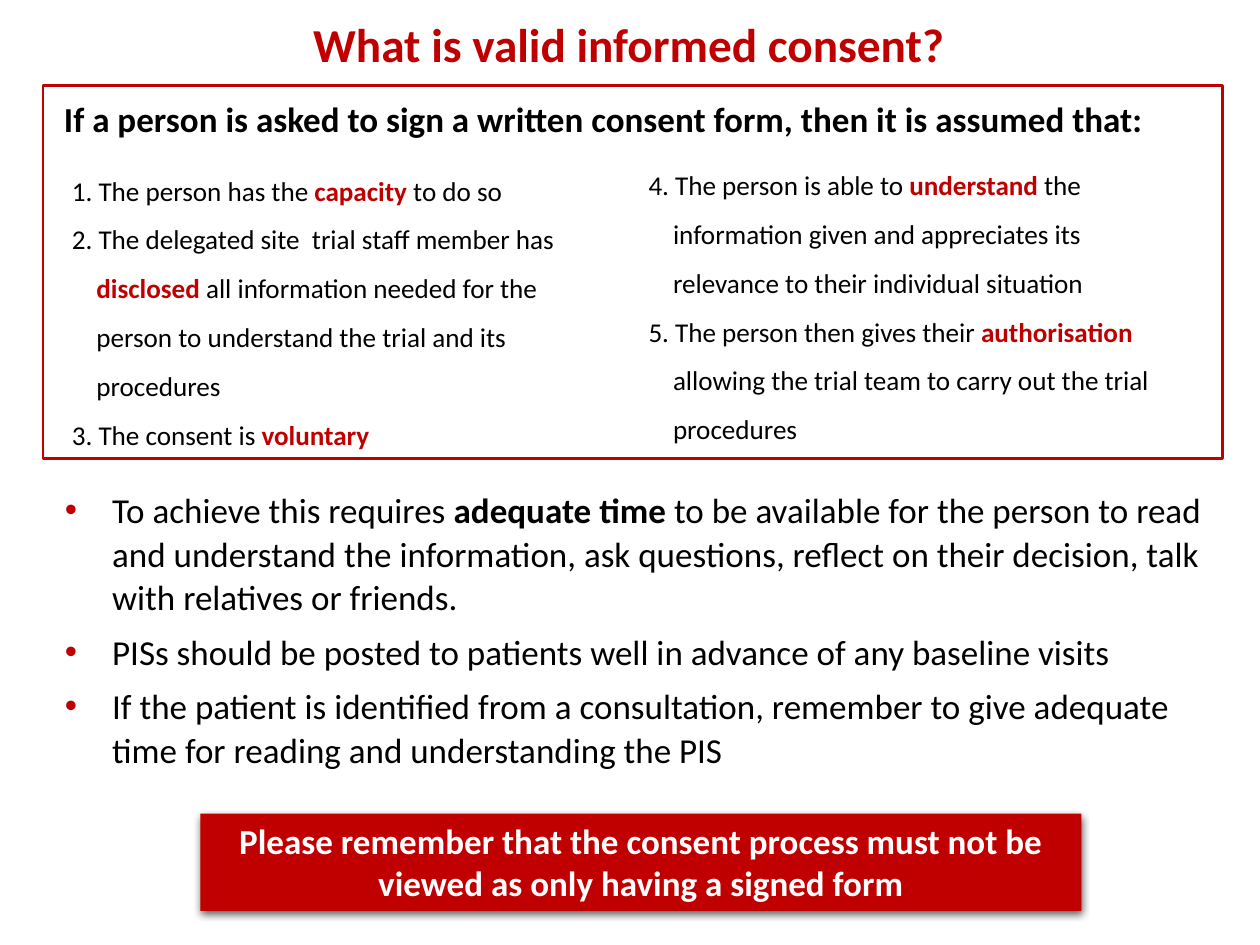
import dataclasses

import lxml.etree
import pptx
import pptx.dml.color
import pptx.enum.shapes
import pptx.enum.text
import pptx.oxml.ns
import pptx.util

Pt = pptx.util.Pt
Align = pptx.enum.text.PP_ALIGN
Anchor = pptx.enum.text.MSO_ANCHOR


@dataclasses.dataclass(frozen=True)
class Theme:
    font: str = "Calibri"
    red: str = "C00000"
    black: str = "000000"
    white: str = "FFFFFF"
    title_size: float = 27
    text_size: float = 20
    list_size: float = 15.5


THEME = Theme()


def rgb(value):
    return pptx.dml.color.RGBColor.from_string(value)


def add_xml(parent, tag, **attributes):
    child = lxml.etree.SubElement(parent, pptx.oxml.ns.qn(tag))
    for name, value in attributes.items():
        child.set(name, str(value))
    return child


def write(para, text, size=THEME.text_size, color=THEME.black, bold=False,
          accent=None, align=Align.LEFT, spacing=None, after=0, hanging=0,
          bullet=None):
    """Fill a paragraph; parts between asterisks are bold in the accent colour."""
    para.alignment = align
    para.space_before, para.space_after = Pt(0), Pt(after)
    if spacing:
        para.line_spacing = spacing
    properties = para._p.get_or_add_pPr()
    properties.set("marL", str(Pt(hanging)))
    properties.set("indent", str(Pt(-hanging)))
    if bullet:
        add_xml(add_xml(properties, "a:buClr"), "a:srgbClr", val=THEME.red)
        add_xml(properties, "a:buFont", typeface="Arial")
        add_xml(properties, "a:buChar", char=bullet)
    for index, part in enumerate(text.split("*")):
        if not part:
            continue
        strong = index % 2 == 1
        span = para.add_run()
        span.text = part
        span.font.name = THEME.font
        span.font.size = Pt(size)
        span.font.bold = bold or strong
        span.font.color.rgb = rgb(accent if strong and accent else color)


class SlideBuilder:
    def __init__(self, deck, theme):
        self.theme = theme
        self.page = deck.slides.add_slide(deck.slide_layouts[5])

    def title(self, text, left, top, width, height):
        box = self.page.shapes.title
        box.left, box.top, box.width, box.height = map(
            Pt, (left, top, width, height))
        frame = box.text_frame
        frame.auto_size = pptx.enum.text.MSO_AUTO_SIZE.NONE
        frame.vertical_anchor = Anchor.MIDDLE
        write(frame.paragraphs[0], text, size=self.theme.title_size,
              color=self.theme.red, bold=True, align=Align.CENTER, spacing=0.9)

    def text(self, items, left, top, width, height, **style):
        """Each item is a text, or a text with its own extra format."""
        box = self.page.shapes.add_textbox(*map(Pt, (left, top, width, height)))
        frame = box.text_frame
        frame.word_wrap = True
        for index, item in enumerate(items):
            text, extra = item if isinstance(item, tuple) else (item, {})
            para = frame.add_paragraph() if index else frame.paragraphs[0]
            write(para, text, **{**style, **extra})

    def rectangle(self, left, top, width, height):
        box = self.page.shapes.add_shape(
            pptx.enum.shapes.MSO_SHAPE.RECTANGLE,
            *map(Pt, (left, top, width, height)))
        box.shadow.inherit = False
        return box

    def frame(self, *place):
        box = self.rectangle(*place)
        box.fill.background()
        box.line.color.rgb = rgb(self.theme.red)
        box.line.width = Pt(1.5)

    def banner(self, text, *place):
        box = self.rectangle(*place)
        box.fill.solid()
        box.fill.fore_color.rgb = rgb(self.theme.red)
        box.line.fill.background()
        # Soft shadow straight below the banner
        effects = box._element.spPr.find(pptx.oxml.ns.qn("a:effectLst"))
        shadow = add_xml(effects, "a:outerShdw", blurRad=Pt(4.5), dist=Pt(1.5),
                         dir=90 * 60000, rotWithShape=0)
        color = add_xml(shadow, "a:srgbClr", val=self.theme.black)
        add_xml(color, "a:alpha", val=63000)
        box.text_frame.word_wrap = True
        box.text_frame.vertical_anchor = Anchor.TOP
        write(box.text_frame.paragraphs[0], text, color=self.theme.white,
              bold=True, align=Align.CENTER)


def main():
    deck = pptx.Presentation()
    deck.slide_width, deck.slide_height = Pt(720), Pt(540)
    slide = SlideBuilder(deck, THEME)
    slide.title("What is valid informed consent?", 49, 14.5, 620.5, 24.5)

    # Framed conditions in two columns
    slide.frame(24.5, 49, 674, 213)
    slide.text(
        ["If a person is asked to sign a written consent form, "
         "then it is assumed that:"],
        29.5, 52, 673, 31.5, bold=True)
    column = dict(size=THEME.list_size, accent=THEME.red, spacing=1.5)
    hang = dict(hanging=14)
    slide.text(
        ["1. The person has the *capacity* to do so",
         ("2. The delegated site  trial staff member has *disclosed *all "
          "information needed for the person to understand the trial and its "
          "procedures", hang),
         "3. The consent is *voluntary*"],
        34, 86.5, 306, 145.5, **column)
    slide.text(
        ["4. The person is able to *understand* the information given and "
         "appreciates its relevance to their individual situation",
         "5. The person then gives their *authorisation* allowing the trial "
         "team to carry out the trial procedures"],
        363.5, 83.5, 306, 178.5, **column, **hang)

    # What this requires in practice
    slide.text(
        ["To achieve this requires *adequate time *to be available for the "
         "person to read and understand the information, ask questions, "
         "reflect on their decision, talk with relatives or friends.",
         "PISs should be posted to patients well in advance of any baseline "
         "visits",
         "If the patient is identified from a consultation, remember to give "
         "adequate time for reading and understanding the PIS"],
        30, 274.5, 677.5, 170.5, spacing=Pt(25), after=6, hanging=27,
        bullet="•")

    # Closing reminder
    slide.banner("Please remember that the consent process must not be viewed "
                 "as only having a signed form", 114.5, 465, 503.5, 55.5)
    deck.save("out.pptx")


if __name__ == "__main__":
    main()
